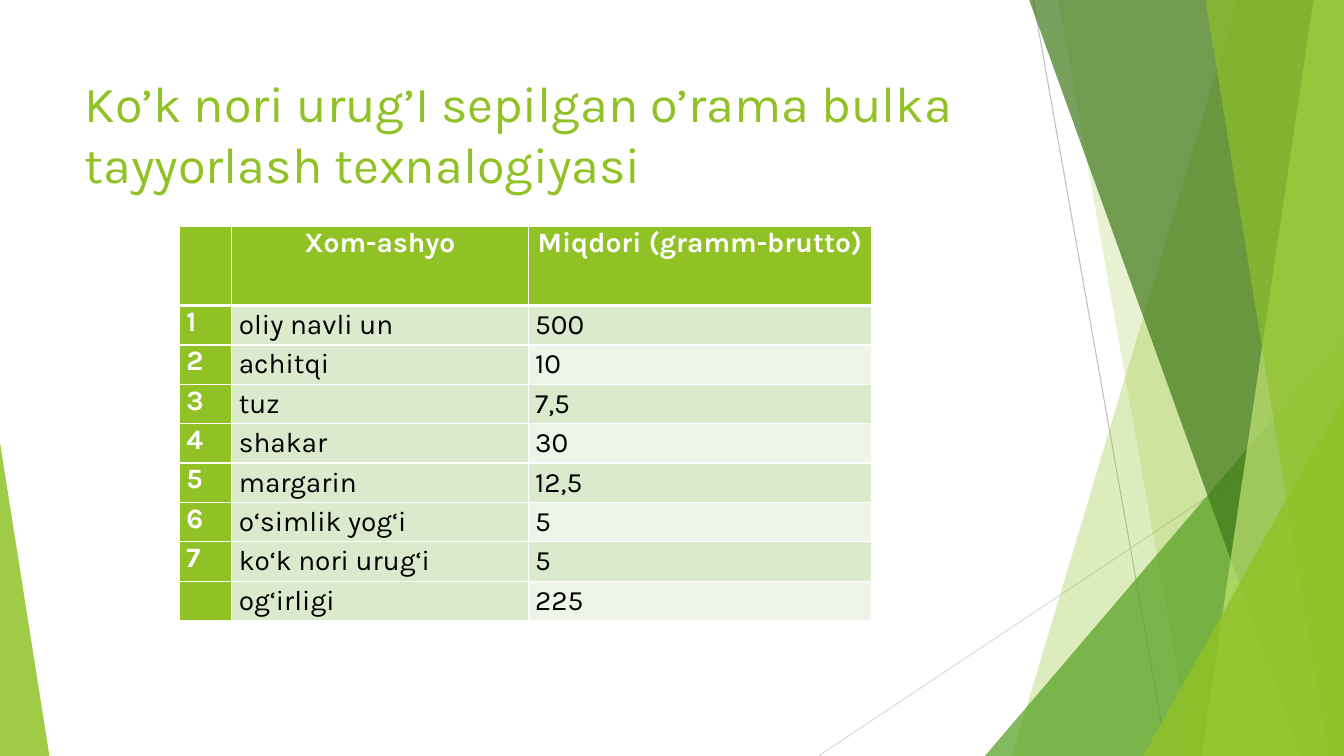
from lxml.etree import SubElement
from pptx import Presentation
from pptx.dml.color import RGBColor
from pptx.enum.shapes import MSO_CONNECTOR, MSO_SHAPE
from pptx.enum.text import MSO_ANCHOR, PP_ALIGN
from pptx.oxml.ns import qn
from pptx.util import Inches, Pt

WIDTH, HEIGHT = Inches(13.333), Inches(7.5)
FONT = "Karla"
GREEN = RGBColor(0x90, 0xC2, 0x26)
MID_GREEN = RGBColor(0x54, 0xA0, 0x21)
DARK_GREEN = RGBColor(0x3F, 0x78, 0x19)
LIME = RGBColor(0xC0, 0xE4, 0x74)
BAND_DARK = RGBColor(0xDB, 0xE9, 0xCD)
BAND_LIGHT = RGBColor(0xEE, 0xF4, 0xE8)
WHITE = RGBColor(0xFF, 0xFF, 0xFF)
BLACK = RGBColor(0, 0, 0)
GREY = RGBColor(0xBF, 0xBF, 0xBF)
LIGHT_GREY = RGBColor(0xD9, 0xD9, 0xD9)

TITLE = "Ko’k nori urug’I sepilgan o’rama bulka tayyorlash texnalogiyasi"
INGREDIENTS = [
    ("", "Xom-ashyo", "Miqdori (gramm-brutto)"),
    ("1", "oliy navli un", "500"),
    ("2", "achitqi", "10"),
    ("3", "tuz", "7,5"),
    ("4", "shakar", "30"),
    ("5", "margarin", "12,5"),
    ("6", "o‘simlik yog‘i", "5"),
    ("7", "ko‘k nori urug‘i", "5"),
    ("", "og‘irligi", "225"),
]
COLUMN_WIDTHS = (3.9, 22.05, 25.58)
ROW_HEIGHT = 5.21


def across(percent):
    """Return a share of the slide's width."""
    return round(WIDTH * percent / 100)


def down(percent):
    """Return a share of the slide's height."""
    return round(HEIGHT * percent / 100)


def write(tf, text, size=20, color=BLACK, bold=False, align=PP_ALIGN.LEFT):
    """Put one formatted paragraph into a text frame."""
    tf.word_wrap = True
    p = tf.paragraphs[0]
    p.alignment = align
    r = p.add_run()
    r.text = text
    r.font.name, r.font.size, r.font.bold = FONT, Pt(size), bold
    r.font.color.rgb = color


def paint(sp, color, opacity):
    """Give a shape a translucent fill without line or shadow."""
    sp.shadow.inherit = False
    sp.line.fill.background()
    sp.fill.solid()
    sp.fill.fore_color.rgb = color
    srgb = sp.fill._xPr.find(f".//{qn('a:srgbClr')}")
    SubElement(srgb, qn("a:alpha"), val=str(opacity * 1000))


def add_line(s, x1, y1, x2, y2, color):
    """Draw a thin straight line."""
    line = s.shapes.add_connector(
        MSO_CONNECTOR.STRAIGHT, across(x1), down(y1), across(x2), down(y2))
    line.line.color.rgb = color
    line.line.width = Pt(0.75)
    SubElement(line._element.spPr, qn("a:effectLst"))


def add_ray(s, top_x, bottom_x, color, opacity):
    """Fill the area from a slanted edge to the slide's right side."""
    builder = s.shapes.build_freeform(across(top_x), 0)
    builder.add_line_segments(
        [(WIDTH, 0), (WIDTH, HEIGHT), (across(bottom_x), HEIGHT)])
    paint(builder.convert_to_shape(), color, opacity)


def add_corner(s, left, top, width, apex, color, opacity):
    """Draw a triangle standing on the slide's lower edge."""
    sp = s.shapes.add_shape(MSO_SHAPE.ISOSCELES_TRIANGLE, across(left),
                            down(top), across(width), HEIGHT - down(top))
    sp.adjustments[0] = apex
    paint(sp, color, opacity)


def add_title(s):
    """Add the heading."""
    box = s.shapes.add_textbox(
        across(5.55), down(8.93), across(70.5), down(19.2))
    write(box.text_frame, TITLE, size=36, color=GREEN)


def add_borders(cell, bottom):
    """Draw white borders around a cell."""
    tcPr = cell._tc.get_or_add_tcPr()
    for side, width in (("L", 1), ("R", 1), ("T", 1), ("B", bottom)):
        ln = SubElement(tcPr, qn(f"a:ln{side}"), w=str(Pt(width)))
        fill = SubElement(ln, qn("a:solidFill"))
        SubElement(fill, qn("a:srgbClr"), val=str(WHITE))


def fill_cell(cell, text, row, column):
    """Format one cell by its place in the table."""
    heading = row == 0 or column == 0
    add_borders(cell, 3 if row == 0 else 1)
    cell.margin_left = cell.margin_right = Inches(0.07)
    cell.margin_top = cell.margin_bottom = 0
    cell.vertical_anchor = MSO_ANCHOR.TOP if heading else MSO_ANCHOR.MIDDLE
    cell.fill.solid()
    if heading:
        cell.fill.fore_color.rgb = GREEN
    elif column == 2 and row % 2 == 0:
        cell.fill.fore_color.rgb = BAND_LIGHT
    else:
        cell.fill.fore_color.rgb = BAND_DARK
    if text:
        write(cell.text_frame, text, color=WHITE if heading else BLACK,
              bold=heading,
              align=PP_ALIGN.CENTER if row == 0 else PP_ALIGN.LEFT)


def add_ingredients(s):
    """Add the table of ingredients, its header two rows high."""
    count = len(INGREDIENTS)
    table = s.shapes.add_table(
        count, len(COLUMN_WIDTHS), across(13.35), down(30),
        across(sum(COLUMN_WIDTHS)), down(ROW_HEIGHT * (count + 1))).table
    table.first_col = True
    for column, width in zip(table.columns, COLUMN_WIDTHS):
        column.width = across(width)
    for i, values in enumerate(INGREDIENTS):
        table.rows[i].height = down(ROW_HEIGHT * (2 if i == 0 else 1))
        for j, text in enumerate(values):
            fill_cell(table.cell(i, j), text, i, j)


def main():
    """Build and save the slide."""
    prs = Presentation()
    prs.slide_width, prs.slide_height = WIDTH, HEIGHT
    s = prs.slides.add_slide(prs.slide_layouts[6])
    add_line(s, 76.88, 0, 86.85, 100, GREY)
    add_line(s, 100, 53.73, 60.9, 100, LIGHT_GREY)
    add_ray(s, 92.1, 75.3, GREEN, 30)
    add_ray(s, 78.75, 88.73, GREEN, 20)
    add_corner(s, 73.28, 44.4, 26.72, 1, MID_GREEN, 72)
    add_ray(s, 76.58, 96.83, DARK_GREEN, 70)
    add_ray(s, 97.73, 89.4, LIME, 70)
    add_ray(s, 89.7, 98.85, GREEN, 65)
    add_corner(s, 85.05, 52.4, 14.95, 1, GREEN, 80)
    add_corner(s, 0, 58.53, 3.68, 0, GREEN, 85)
    add_title(s)
    add_ingredients(s)
    prs.save("out.pptx")


if __name__ == "__main__":
    main()
